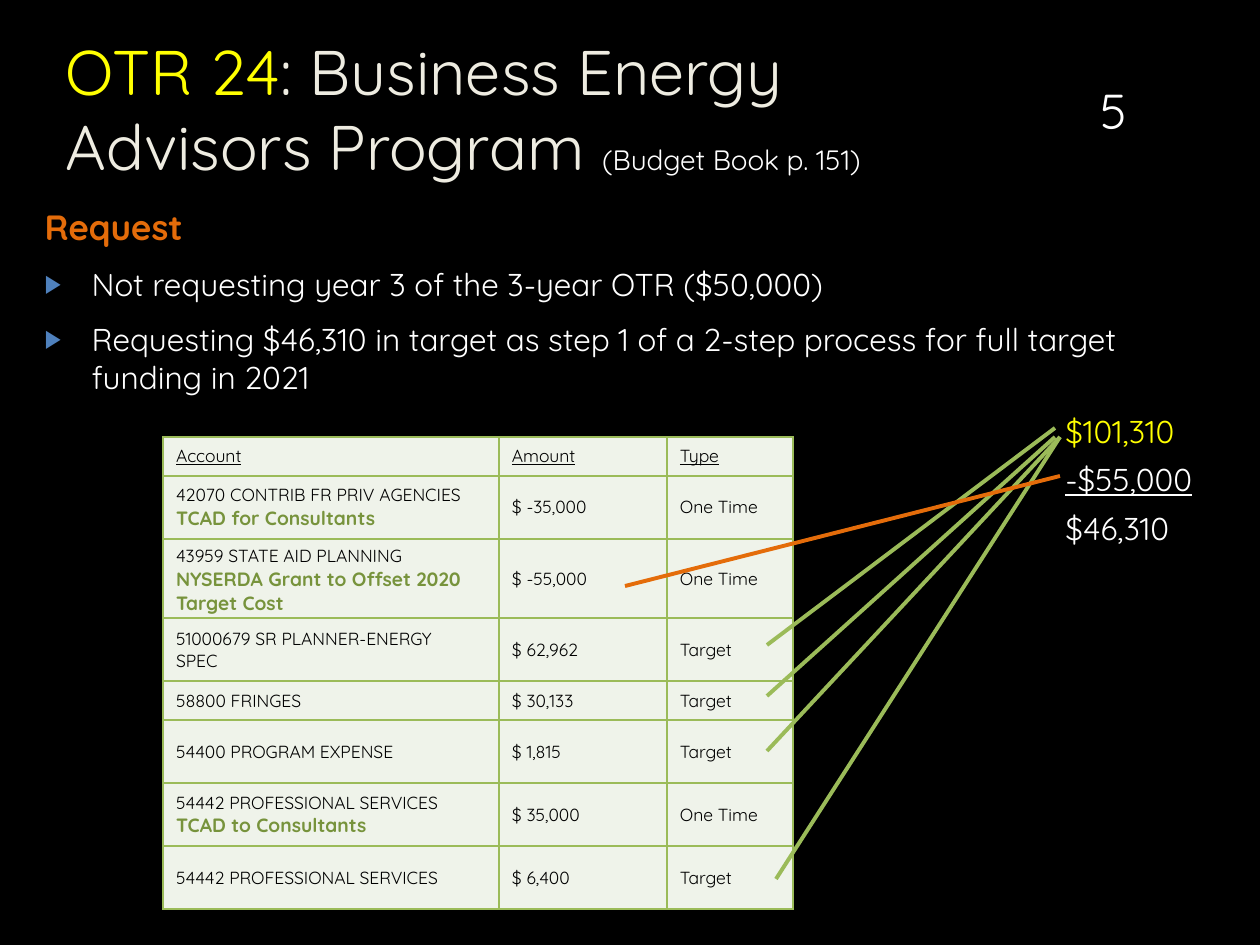
import pptx
import pptx.dml.color
import pptx.enum.shapes
import pptx.enum.text
import pptx.oxml
import pptx.oxml.ns
import pptx.util

EMU_PER_PX = 914400 / 126
FONT = "Quicksand"
COLORS = {
    "background": "000000", "ink": "000000", "text": "FFFFFF", "heading": "EEECE1",
    "highlight": "FFFF00", "offset": "E46C0A", "bullet": "4F81BD",
    "target": "9BBB59", "note": "77933C", "cell": "EFF3EA",
}
ANCHOR = pptx.enum.text.MSO_ANCHOR
ALIGN = pptx.enum.text.PP_ALIGN

# Each cell is a list of paragraphs, each paragraph a list of (text, format) runs.
NOTE = {"size": 11, "color": "note", "bold": True}
ACCOUNTS = [
    ([[("42070 CONTRIB FR PRIV AGENCIES ", {}), ("TCAD for Consultants", NOTE)]],
     "$ -35,000", "One Time"),
    ([[("43959 STATE AID PLANNING", {})],
      [("NYSERDA Grant to Offset 2020 Target Cost", NOTE)]],
     "$ -55,000", "One Time"),
    ([[("51000679 SR PLANNER-ENERGY SPEC", {})]], "$ 62,962", "Target"),
    ([[("58800 FRINGES", {})]], "$ 30,133", "Target"),
    ([[("54400 PROGRAM EXPENSE", {})]], "$ 1,815", "Target"),
    ([[("54442 PROFESSIONAL SERVICES ", {}), ("TCAD to Consultants", NOTE)]],
     "$ 35,000", "One Time"),
    ([[("54442 PROFESSIONAL SERVICES", {})]], "$ 6,400", "Target"),
]


def px(length):
    return pptx.util.Emu(round(length * EMU_PER_PX))


def rgb(name):
    return pptx.dml.color.RGBColor.from_string(COLORS[name])


def add_xml(parent, xml):
    namespace = pptx.oxml.ns.nsdecls("a")
    parent.append(pptx.oxml.parse_xml(xml.replace(" ", f" {namespace} ", 1)))


def write(paragraph, text, size=18, color="text", bold=False, underline=False):
    """Append one formatted run."""
    run = paragraph.add_run()
    run.text = text
    run.font.name = FONT
    run.font.size = pptx.util.Pt(size)
    run.font.bold = bold
    run.font.underline = underline
    run.font.color.rgb = rgb(color)


def fill_paragraphs(frame, paragraphs, before=0, after=0, align=ALIGN.LEFT, **style):
    for index, runs in enumerate(paragraphs):
        paragraph = frame.paragraphs[0] if index == 0 else frame.add_paragraph()
        paragraph.alignment = align
        paragraph.space_before = pptx.util.Pt(before if index else 0)
        paragraph.space_after = pptx.util.Pt(after)
        for text, changes in runs:
            write(paragraph, text, **{**style, **changes})


class BudgetSlide:
    """Holds the slide and the style shared by its elements."""

    line_width = pptx.util.Pt(2.25)
    cell_insets = (13, 6, 26, 6)

    def __init__(self, presentation):
        self.slide = presentation.slides.add_slide(presentation.slide_layouts[1])
        self.slide.background.fill.solid()
        self.slide.background.fill.fore_color.rgb = rgb("background")

    def placeholder(self, index, box, paragraphs, **style):
        holder = self.slide.placeholders[index]
        holder.left, holder.top, holder.width, holder.height = map(px, box)
        frame = holder.text_frame
        frame.auto_size = pptx.enum.text.MSO_AUTO_SIZE.NONE
        frame.vertical_anchor = ANCHOR.TOP
        fill_paragraphs(frame, paragraphs, **style)
        return frame

    def bullet(self, paragraph, indent=47):
        properties = paragraph._p.get_or_add_pPr()
        properties.set("marL", str(px(indent)))
        properties.set("indent", str(-px(indent)))
        add_xml(properties, f'<a:buClr ><a:srgbClr val="{COLORS["bullet"]}"/></a:buClr>')
        add_xml(properties, '<a:buSzPct val="80000"/>')
        add_xml(properties, '<a:buChar char="▶"/>')

    def no_bullet(self, paragraph):
        properties = paragraph._p.get_or_add_pPr()
        properties.set("marL", "0")
        properties.set("indent", "0")
        add_xml(properties, "<a:buNone />")

    def text(self, box, paragraphs, anchor=ANCHOR.TOP, **style):
        frame = self.slide.shapes.add_textbox(*map(px, box)).text_frame
        frame.word_wrap = True
        frame.vertical_anchor = anchor
        fill_paragraphs(frame, paragraphs, **style)

    def cell(self, cell, paragraphs, **style):
        (cell.margin_left, cell.margin_top,
         cell.margin_right, cell.margin_bottom) = map(px, self.cell_insets)
        cell.vertical_anchor = ANCHOR.MIDDLE
        fill_paragraphs(cell.text_frame, paragraphs, size=10, color="ink", **style)
        properties = cell._tc.get_or_add_tcPr()
        for side in ("lnL", "lnR", "lnT", "lnB"):
            add_xml(properties, f'<a:{side} w="12700"><a:solidFill><a:srgbClr '
                                f'val="{COLORS["target"]}"/></a:solidFill></a:{side}>')
        cell.fill.solid()
        cell.fill.fore_color.rgb = rgb("cell")

    def table(self, left, top, widths, heights, headings, rows):
        table = self.slide.shapes.add_table(
            len(heights), len(widths), px(left), px(top),
            px(sum(widths)), px(sum(heights))).table
        table.first_row = table.horz_banding = False
        for column, width in zip(table.columns, widths):
            column.width = px(width)
        for row, height in zip(table.rows, heights):
            row.height = px(height)
        for column, heading in enumerate(headings):
            self.cell(table.cell(0, column), [[(heading, {})]], underline=True)
        for index, (account, amount, kind) in enumerate(rows, 1):
            self.cell(table.cell(index, 0), account)
            self.cell(table.cell(index, 1), [[(amount, {})]])
            self.cell(table.cell(index, 2), [[(kind, {})]])

    def line(self, start, end, color):
        connector = self.slide.shapes.add_connector(
            pptx.enum.shapes.MSO_CONNECTOR.STRAIGHT, *map(px, start + end))
        connector.line.color.rgb = rgb(color)
        connector.line.width = self.line_width
        add_xml(connector._element.spPr, "<a:effectLst />")


def main():
    presentation = pptx.Presentation()
    presentation.slide_width, presentation.slide_height = px(1260), px(945)
    page = BudgetSlide(presentation)

    page.placeholder(0, (53, 26, 983, 193), [[
        ("OTR 24", {"color": "highlight"}),
        (": Business Energy Advisors Program ", {}),
        ("(Budget Book p. 151)", {"size": 16, "color": "text"}),
    ]], size=36, color="heading")
    page.text((1070, 40, 87, 106), [[("5", {})]], anchor=ANCHOR.BOTTOM,
              align=ALIGN.CENTER, size=28)

    request = page.placeholder(1, (32, 199, 1125, 217), [
        [("Request", {"size": 20, "color": "offset", "bold": True})],
        [("Not requesting year 3 of the 3-year OTR ($50,000)", {})],
        [("Requesting $46,310 in target as step 1 of a 2-step process "
          "for full target funding in 2021", {})],
    ], before=10)
    heading, *points = request.paragraphs
    page.no_bullet(heading)
    for point in points:
        page.bullet(point)

    page.table(163, 437, (336, 168, 126), (39, 63, 63, 63, 39, 63, 63, 63),
               ("Account", "Amount", "Type"), ACCOUNTS)

    for start, end in [((767, 645), (1055, 428)), ((767, 696), (1055, 437)),
                       ((767, 751), (1060, 437)), ((776, 879), (1060, 437))]:
        page.line(start, end, "target")

    page.text((1053, 406, 175, 149), [
        [("$101,310", {"color": "highlight"})],
        [("-$55,000", {"underline": True})],
        [("$46,310", {})],
    ], after=6)
    page.line((625, 586), (1060, 476), "offset")

    presentation.save("out.pptx")


if __name__ == "__main__":
    main()
